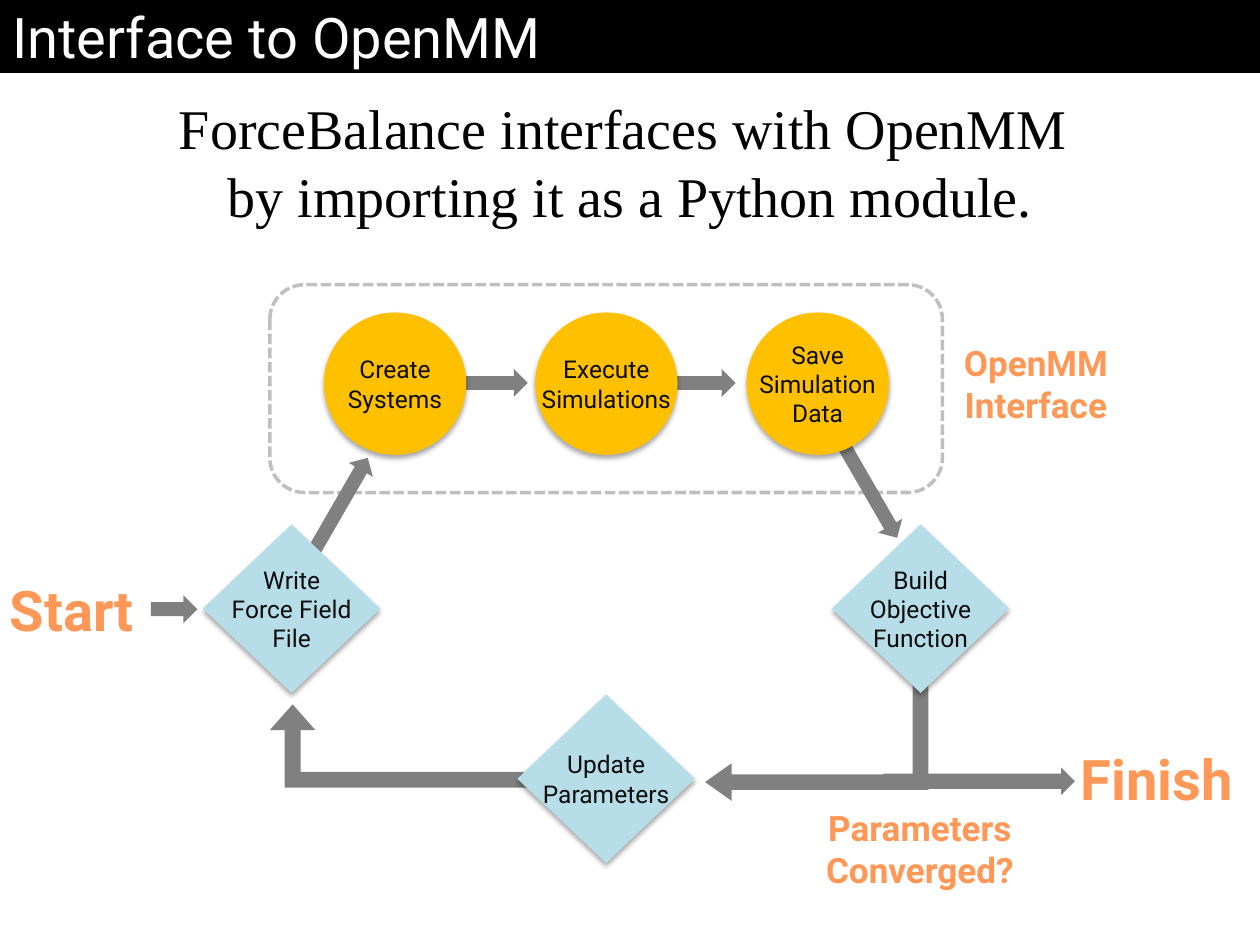
from copy import deepcopy
from dataclasses import dataclass

from lxml import etree
from pptx import Presentation
from pptx.dml.color import RGBColor
from pptx.enum.dml import MSO_LINE
from pptx.enum.shapes import MSO_SHAPE
from pptx.enum.text import MSO_ANCHOR, PP_ALIGN
from pptx.oxml.ns import qn
from pptx.util import Cm, Pt

RECTANGLE, ROUNDED = MSO_SHAPE.RECTANGLE, MSO_SHAPE.ROUNDED_RECTANGLE
CIRCLE, DECISION = MSO_SHAPE.OVAL, MSO_SHAPE.FLOWCHART_DECISION
DOWN_ARROW, BENT_ARROW = MSO_SHAPE.DOWN_ARROW, MSO_SHAPE.BENT_UP_ARROW
LEFT, CENTER = PP_ALIGN.LEFT, PP_ALIGN.CENTER
TOP, MIDDLE = MSO_ANCHOR.TOP, MSO_ANCHOR.MIDDLE
DASHED = MSO_LINE.SQUARE_DOT


@dataclass(frozen=True)
class Theme:
    black: str = "000000"
    white: str = "FFFFFF"
    ink: str = "0D0D0D"
    arrow: str = "808080"
    frame: str = "BFBFBF"
    step: str = "FFC000"
    decision: str = "B7DEE8"
    accent: str = "FF9856"
    sans: str = "Roboto"
    serif: str = "Times New Roman"
    large: int = 32
    medium: int = 20
    small: int = 14


THEME = Theme()


def write(shape, text, *, size, color, font=THEME.sans, bold=False, align=CENTER,
          anchor=MIDDLE, wrap=True, margin=None, spacing=None):
    """Fill a shape with text: \\n starts a paragraph, \\v breaks a line."""
    frame = shape.text_frame
    frame.text = text
    frame.word_wrap = wrap
    frame.vertical_anchor = anchor
    if margin is not None:
        frame.margin_left = frame.margin_right = Cm(margin)
        frame.margin_top = frame.margin_bottom = Cm(margin)
    for paragraph in frame.paragraphs:
        paragraph.alignment = align
        if spacing:
            paragraph.line_spacing = Pt(spacing)
        for run in paragraph.runs:
            run.font.size = Pt(size)
            run.font.name = font
            run.font.bold = bold
            run.font.color.rgb = RGBColor.from_string(color)
        # Line breaks take the format of the text around them
        for line_break in paragraph._p.findall(qn("a:br")):
            line_break.insert(0, deepcopy(paragraph.runs[0]._r.rPr))


def add_block(slide, kind, left, top, width, height, fill=None):
    block = slide.shapes.add_shape(kind, Cm(left), Cm(top), Cm(width), Cm(height))
    block.shadow.inherit = False
    block.line.fill.background()
    if fill:
        block.fill.solid()
        block.fill.fore_color.rgb = RGBColor.from_string(fill)
    else:
        block.fill.background()
    return block


def add_soft_shadow(block):
    effects = block._element.spPr.find(qn("a:effectLst"))
    shadow = etree.SubElement(effects, qn("a:outerShdw"), blurRad=str(Pt(3.1)),
                              dist=str(Pt(1.8)), dir="5400000", rotWithShape="0")
    color = etree.SubElement(shadow, qn("a:srgbClr"), val=THEME.black)
    etree.SubElement(color, qn("a:alpha"), val="35000")


def add_node(slide, kind, left, top, width, height, fill, text, margin=None):
    node = add_block(slide, kind, left, top, width, height, fill)
    add_soft_shadow(node)
    write(node, text, size=THEME.small, color=THEME.ink, wrap=False, margin=margin)


def add_arrow(slide, center_x, center_y, angle, length=3.86, shaft=0.5):
    """Straight arrow turned clockwise from pointing down."""
    width = 0.56
    arrow = add_block(slide, DOWN_ARROW, center_x - width / 2, center_y - length / 2,
                      width, length, THEME.arrow)
    arrow.adjustments[0] = shaft
    arrow.rotation = angle


def add_bent_arrow(slide, left, top, width, height, proportions, angle=0):
    arrow = add_block(slide, BENT_ARROW, left, top, width, height, THEME.arrow)
    for index, value in enumerate(proportions):
        arrow.adjustments[index] = value
    arrow.rotation = angle
    arrow._element.spPr.find(qn("a:xfrm")).set("flipH", "1")


def add_label(slide, left, top, width, height, text, **text_format):
    label = slide.shapes.add_textbox(Cm(left), Cm(top), Cm(width), Cm(height))
    write(label, text, anchor=TOP, **text_format)


def add_headings(slide):
    banner = add_block(slide, RECTANGLE, 0, 0, 25.4, 1.47, THEME.black)
    write(banner, "Interface to OpenMM", size=THEME.large, color=THEME.white, align=LEFT)
    add_label(slide, 0.76, 1.73, 23.9, 3,
              "ForceBalance interfaces with OpenMM \vby importing it as a Python module.",
              size=THEME.large, color=THEME.black, font=THEME.serif, spacing=39)


def add_interface_frame(slide):
    frame = add_block(slide, ROUNDED, 5.44, 5.74, 13.56, 4.19)
    frame.line.color.rgb = RGBColor.from_string(THEME.frame)
    frame.line.width = Pt(2)
    frame.line.dash_style = DASHED


def add_flow_arrows(slide):
    add_bent_arrow(slide, 14.94, 12.37, 3.05, 4.5, (0.103, 0.124, 0.175), angle=270)
    add_bent_arrow(slide, 5.44, 14.2, 6.48, 1.68, (0.189, 0.274, 0.31))
    add_arrow(slide, 6.45, 10.9, 210)     # force field file to systems
    add_arrow(slide, 8.71, 7.72, 270)     # systems to simulations
    add_arrow(slide, 12.9, 7.72, 270)     # simulations to data
    add_arrow(slide, 17.12, 9.17, 330)    # data to objective function
    add_arrow(slide, 3.51, 12.28, 270, length=0.94)
    add_arrow(slide, 19.74, 15.75, 270, shaft=0.547)


def add_flow_nodes(slide):
    # Simulation steps inside the interface
    steps = ("Create\vSystems", "Execute\vSimulations", "Save\nSimulation\vData")
    for column, text in enumerate(steps):
        add_node(slide, CIRCLE, 6.53 + 4.26 * column, 6.3, 2.87, 2.87, THEME.step, text)

    # Optimizer steps, the middle one lower
    decisions = (("Write\vForce Field\vFile", 10.57),
                 ("Update\vParameters", 14),
                 ("Build\nObjective\vFunction", 10.57))
    for column, (text, top) in enumerate(decisions):
        add_node(slide, DECISION, 4.09 + 6.34 * column, top, 3.58, 3.4,
                 THEME.decision, text, margin=0)


def add_flow_labels(slide):
    labels = (("Start", -0.15, 11.48, 3.2, 1.63, THEME.large),
              ("Finish", 21.51, 14.88, 3.63, 1.63, THEME.large),
              ("OpenMM\vInterface", 19.08, 6.76, 3.61, 1.96, THEME.medium),
              ("Parameters\vConverged?", 16.31, 16.13, 4.47, 1.96, THEME.medium))
    for text, left, top, width, height, size in labels:
        add_label(slide, left, top, width, height, text, size=size,
                  color=THEME.accent, bold=True, wrap=False)


def main():
    deck = Presentation()
    deck.slide_width, deck.slide_height = Cm(25.4), Cm(19.05)
    slide = deck.slides.add_slide(deck.slide_layouts[6])
    add_headings(slide)
    add_interface_frame(slide)
    add_flow_arrows(slide)
    add_flow_nodes(slide)
    add_flow_labels(slide)
    deck.save("out.pptx")


if __name__ == "__main__":
    main()
